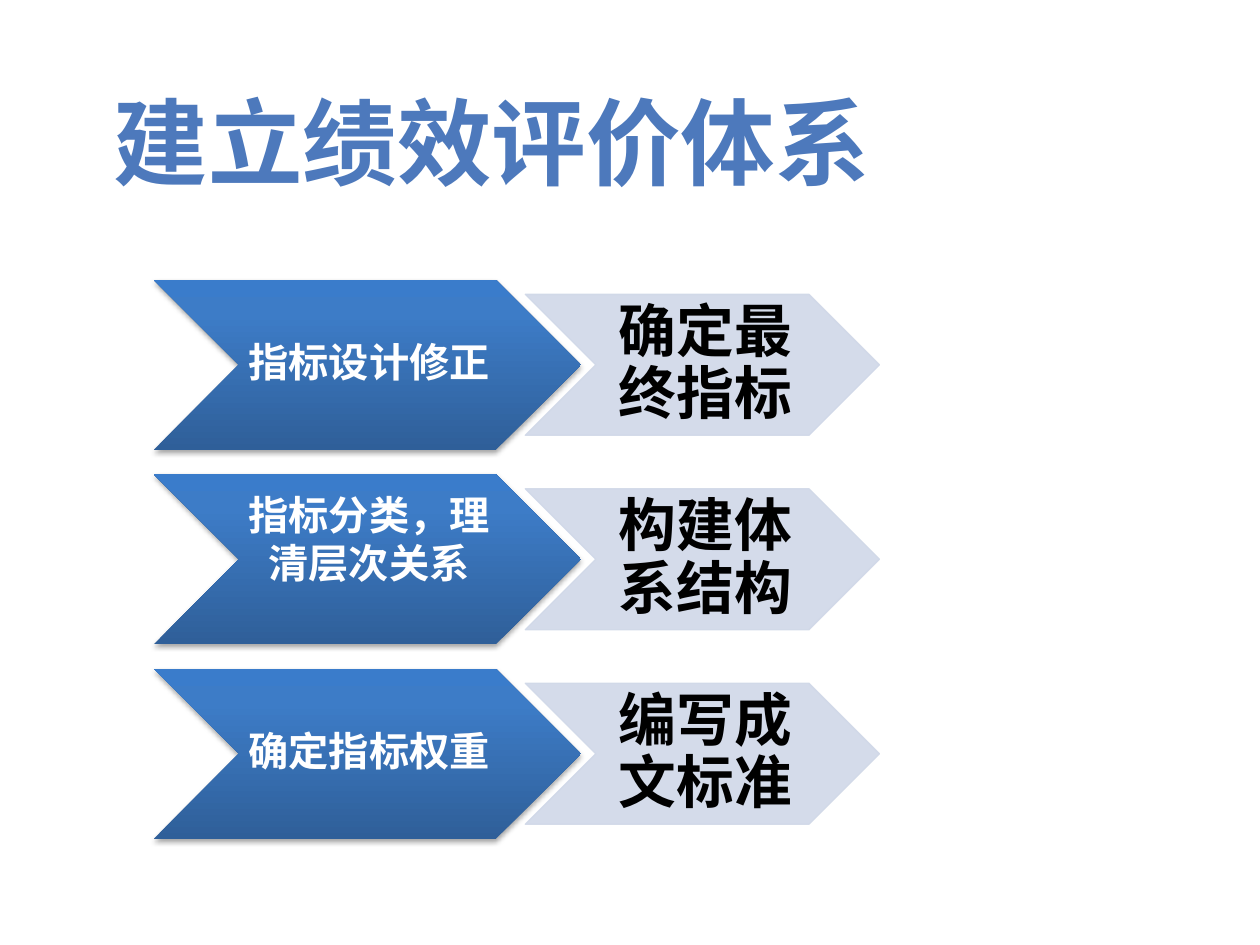
from copy import deepcopy

from lxml import etree
from pptx import Presentation
from pptx import util as u
from pptx.dml.color import RGBColor
from pptx.enum import shapes, text
from pptx.oxml.ns import qn

STEPS = [
    ("指标设计修正", "确定最终指标"),
    ("指标分类，理清层次关系", "构建体系结构"),
    ("确定指标权重", "编写成文标准"),
]
GRADIENT = [(0, "2F5F99"), (0.8, "3D7CC7"), (1, "3A7CCB")]
STEP_SIZE = (8.61, 3.43)
RESULT_SIZE = (7.14, 2.84)
STEP_LEFT, RESULT_LEFT, TOP, PITCH = 3.1, 10.59, 5.64, 3.92


def rgb(value):
    return RGBColor.from_string(value)


def add_chevron(container, left, top, size):
    shape = container.shapes.add_shape(
        shapes.MSO_SHAPE.CHEVRON, u.Cm(left), u.Cm(top), *map(u.Cm, size))
    shape.shadow.inherit = False
    return shape


def fill_gradient(shape):
    """Fill from dark at the bottom to light at the top."""
    shape.fill.gradient()
    shape.fill.gradient_angle = 90
    stop_list = next(shape._element.spPr.iter(qn("a:gsLst")))
    stop_list.append(deepcopy(stop_list[-1]))
    for stop, (position, color) in zip(shape.fill.gradient_stops, GRADIENT):
        stop.position = position
        stop.color.rgb = rgb(color)


def add_shadow(shape):
    effects = shape._element.spPr.find(qn("a:effectLst"))
    shadow = etree.SubElement(
        effects, qn("a:outerShdw"), blurRad=str(u.Pt(3.1)), dist=str(u.Pt(1.8)),
        dir="5400000", rotWithShape="0")
    color = etree.SubElement(shadow, qn("a:srgbClr"), val="000000")
    etree.SubElement(color, qn("a:alpha"), val="35000")


def fill_translucent(shape, color):
    """Give fill and line one colour at 90 % opacity."""
    shape.fill.solid()
    shape.fill.fore_color.rgb = rgb(color)
    shape.line.color.rgb = rgb(color)
    shape.line.width = u.Pt(0.75)
    for element in shape._element.spPr.iter(qn("a:srgbClr")):
        etree.SubElement(element, qn("a:alpha"), val="90000")


def add_text(container, box, words, size, color, font="Calibri", spacing=None):
    frame = container.shapes.add_textbox(*map(u.Cm, box)).text_frame
    frame.word_wrap = True
    frame.text = words
    paragraph = frame.paragraphs[0]
    paragraph.alignment = text.PP_ALIGN.CENTER
    paragraph.line_spacing = spacing
    run_font = paragraph.runs[0].font
    run_font.name = font
    run_font.size = u.Pt(size)
    run_font.bold = True
    run_font.color.rgb = rgb(color)
    return frame


def add_label(container, left, top, size, words, points, color,
              inset=0.08, bottom=0.05, spacing=0.9):
    """Centre words between the notch and the point of a chevron."""
    width, height = size
    box = (left + height / 2, top, width - height, height)
    frame = add_text(container, box, words, points, color, spacing=spacing)
    frame.vertical_anchor = text.MSO_ANCHOR.MIDDLE
    frame.margin_left, frame.margin_right = u.Cm(inset), 0
    frame.margin_top, frame.margin_bottom = u.Cm(0.05), u.Cm(bottom)


def add_row(container, top, step, result):
    chevron = add_chevron(container, STEP_LEFT, top, STEP_SIZE)
    fill_gradient(chevron)
    chevron.line.fill.background()
    add_shadow(chevron)
    # A step of two lines sits higher and more loosely spaced.
    layout = {"bottom": 0.9, "spacing": 1.0} if len(step) > 6 else {}
    add_label(container, STEP_LEFT, top, STEP_SIZE, step, 23, "FFFFFF", **layout)

    result_top = top + (STEP_SIZE[1] - RESULT_SIZE[1]) / 2
    chevron = add_chevron(container, RESULT_LEFT, result_top, RESULT_SIZE)
    fill_translucent(chevron, "D0D8E8")
    add_label(container, RESULT_LEFT, result_top, RESULT_SIZE, result, 33,
              "000000", inset=0.13)


def main():
    presentation = Presentation()
    presentation.slide_width = u.Cm(25.4)
    presentation.slide_height = u.Cm(19.05)
    slide = presentation.slides.add_slide(presentation.slide_layouts[6])
    group = slide.shapes.add_group_shape()
    for index, (step, result) in enumerate(STEPS):
        add_row(group, TOP + index * PITCH, step, result)
    add_text(slide, (0.48, 1.57, 18.87, 2.57), "建立绩效评价体系", 54, "4D79BC",
             font="Noto Sans CJK JP")
    presentation.save("out.pptx")


if __name__ == "__main__":
    main()
